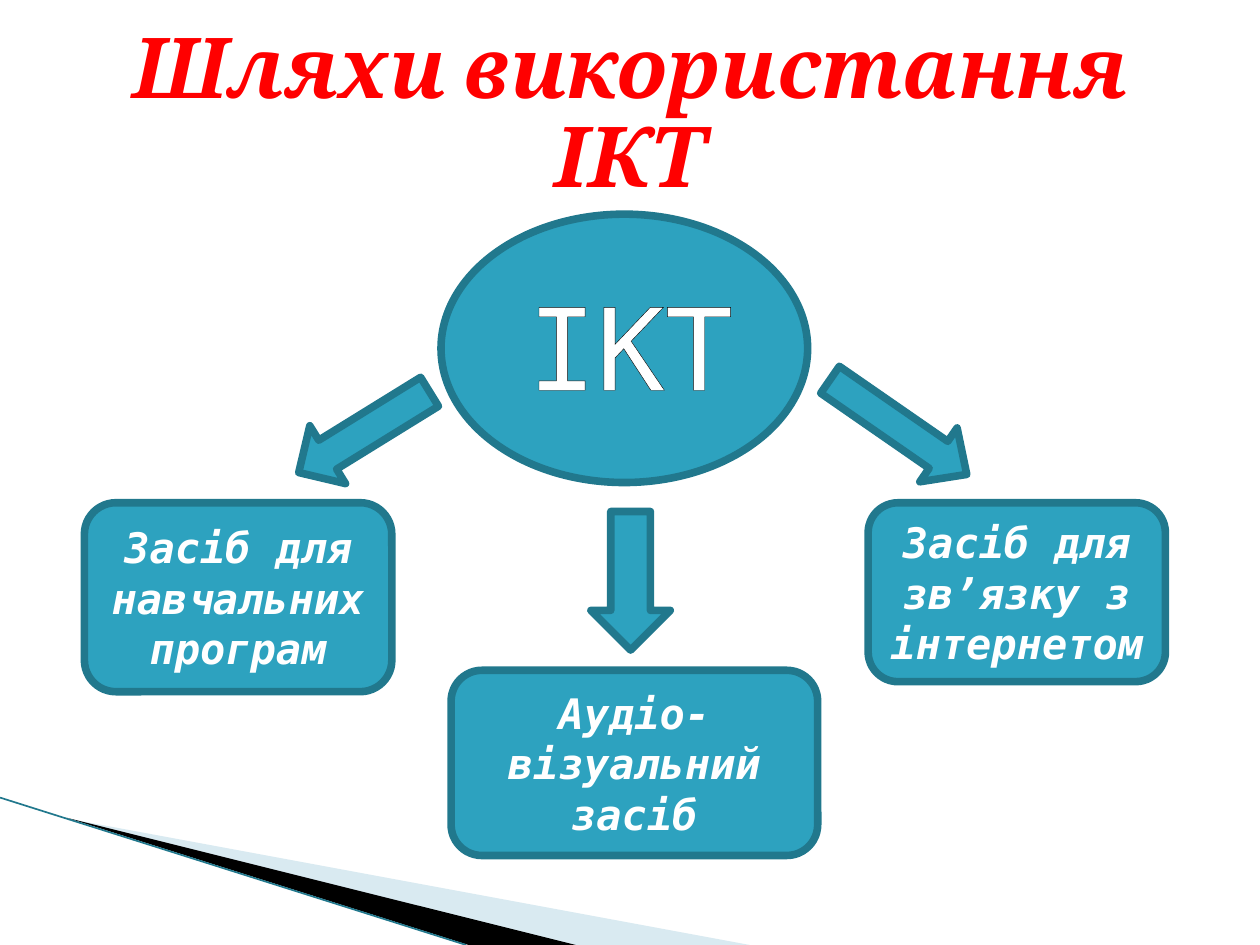
from dataclasses import dataclass
from typing import Optional

import pptx
import pptx.dml.color
import pptx.enum.shapes
import pptx.enum.text
import pptx.oxml
import pptx.oxml.ns
import pptx.util
from lxml import etree

Inches = pptx.util.Inches
Pt = pptx.util.Pt
MSO = pptx.enum.shapes.MSO_SHAPE
ALIGN = pptx.enum.text.PP_ALIGN
MIDDLE = pptx.enum.text.MSO_ANCHOR.MIDDLE
NS = pptx.oxml.ns.nsdecls("a")
MONO = "DejaVu Sans Mono"
TEAL = "2DA2BF"
DARK_TEAL = "21788D"


@dataclass
class Block:
    kind: MSO
    left: float
    top: float
    width: float
    height: float
    text: str = ""
    rotation: float = 0
    adjustments: tuple[float, ...] = ()


@dataclass
class Wedge:
    points: list[tuple[float, float]]
    color: str
    alpha: Optional[int] = None


BLOCKS = [
    Block(MSO.OVAL, 3.5, 1.7, 2.91, 2.13),
    Block(MSO.DOWN_ARROW, 4.69, 4.06, 0.63, 1.1),
    Block(MSO.RIGHT_ARROW, 6.47, 3.13, 1.32, 0.52, rotation=34.7, adjustments=(0.5, 0.525)),
    Block(MSO.LEFT_ARROW, 2.28, 3.16, 1.22, 0.54, rotation=328.3),
    Block(MSO.ROUNDED_RECTANGLE, 0.67, 3.99, 2.44, 1.5, "Засіб для навчальних програм"),
    Block(MSO.ROUNDED_RECTANGLE, 6.89, 3.99, 2.36, 1.42, "Засіб для зв’язку з інтернетом"),
    Block(MSO.ROUNDED_RECTANGLE, 3.58, 5.32, 2.91, 1.47, "Аудіо-\nвізуальний засіб"),
]
WEDGES = [
    Wedge([(0.55, 6.5), (5.95, 7.5), (4.56, 7.5)], "A0CBDC", 40),
    Wedge([(0.53, 6.49), (4.57, 7.5), (3.72, 7.5)], "000000"),
]


def rgb(color: str) -> pptx.dml.color.RGBColor:
    return pptx.dml.color.RGBColor.from_string(color)


def write(tf, text: str, size: float, font: str, color: str, bold: bool = False) -> None:
    tf.text = text
    tf.word_wrap = True
    tf.vertical_anchor = MIDDLE
    for p in tf.paragraphs:
        p.alignment = ALIGN.CENTER
        for r in p.runs:
            r.font.size = Pt(size)
            r.font.name = font
            r.font.bold = r.font.italic = bold
            r.font.color.rgb = rgb(color)


def outline(tf, color: str, width: float) -> None:
    for r in tf.paragraphs[0].runs:
        ln = pptx.oxml.parse_xml(
            f'<a:ln {NS} w="{Pt(width)}"><a:solidFill><a:srgbClr val="{color}"/></a:solidFill></a:ln>'
        )
        r.font._element.insert(0, ln)


def draw_wedge(s, wedge: Wedge) -> None:
    points = [(Inches(x), Inches(y)) for x, y in wedge.points]
    builder = s.shapes.build_freeform(*points[0])
    builder.add_line_segments(points[1:])
    sp = builder.convert_to_shape()
    sp.shadow.inherit = False
    sp.line.fill.background()
    sp.fill.solid()
    sp.fill.fore_color.rgb = rgb(wedge.color)
    if wedge.alpha is not None:
        clr = sp._element.spPr.find(".//" + pptx.oxml.ns.qn("a:srgbClr"))
        etree.SubElement(clr, pptx.oxml.ns.qn("a:alpha"), val=str(wedge.alpha * 1000))


def draw_edge(s) -> None:
    line = s.shapes.add_connector(
        pptx.enum.shapes.MSO_CONNECTOR.STRAIGHT, 0, Inches(6.33), Inches(3.7), Inches(7.5)
    )
    line.line.color.rgb = rgb(DARK_TEAL)
    line.line.width = Pt(0.95)
    etree.SubElement(line._element.spPr, pptx.oxml.ns.qn("a:effectLst"))


def draw_block(s, block: Block) -> None:
    sp = s.shapes.add_shape(
        block.kind, Inches(block.left), Inches(block.top), Inches(block.width), Inches(block.height)
    )
    sp.shadow.inherit = False
    sp.rotation = block.rotation
    for i, value in enumerate(block.adjustments):
        sp.adjustments[i] = value
    sp.fill.solid()
    sp.fill.fore_color.rgb = rgb(TEAL)
    sp.line.color.rgb = rgb(DARK_TEAL)
    sp.line.width = Pt(4.33)
    if block.text:
        write(sp.text_frame, block.text, 24, MONO, "FFFFFF", bold=True)


def draw_title(s) -> None:
    title = s.shapes.title
    title.left, title.top = Inches(0.5), Inches(0.3)
    title.width, title.height = Inches(9), Inches(1.25)
    tf = title.text_frame
    write(tf, "Шляхи використання ІКТ", 48, "Cambria", "FF0000", bold=True)
    tf.auto_size = pptx.enum.text.MSO_AUTO_SIZE.NONE
    tf.paragraphs[0].line_spacing = 0.88
    outline(tf, "000000", 1.5)


def draw_center_label(s) -> None:
    tf = s.shapes.add_textbox(Inches(2.8), Inches(2.02), Inches(4.41), Inches(1.57)).text_frame
    write(tf, "ІКТ", 65, MONO, "FFFFFF")
    tf.margin_left = tf.margin_right = tf.margin_top = tf.margin_bottom = Inches(0.27)
    tf.paragraphs[0].line_spacing = 0.9
    outline(tf, "0D0D0D", 0.75)


def main() -> None:
    prs = pptx.Presentation()
    prs.slide_width, prs.slide_height = Inches(10), Inches(7.5)
    s = prs.slides.add_slide(prs.slide_layouts[5])
    for wedge in WEDGES:
        draw_wedge(s, wedge)
    draw_edge(s)
    draw_title(s)
    for block in BLOCKS:
        draw_block(s, block)
    draw_center_label(s)
    prs.save("out.pptx")


if __name__ == "__main__":
    main()
